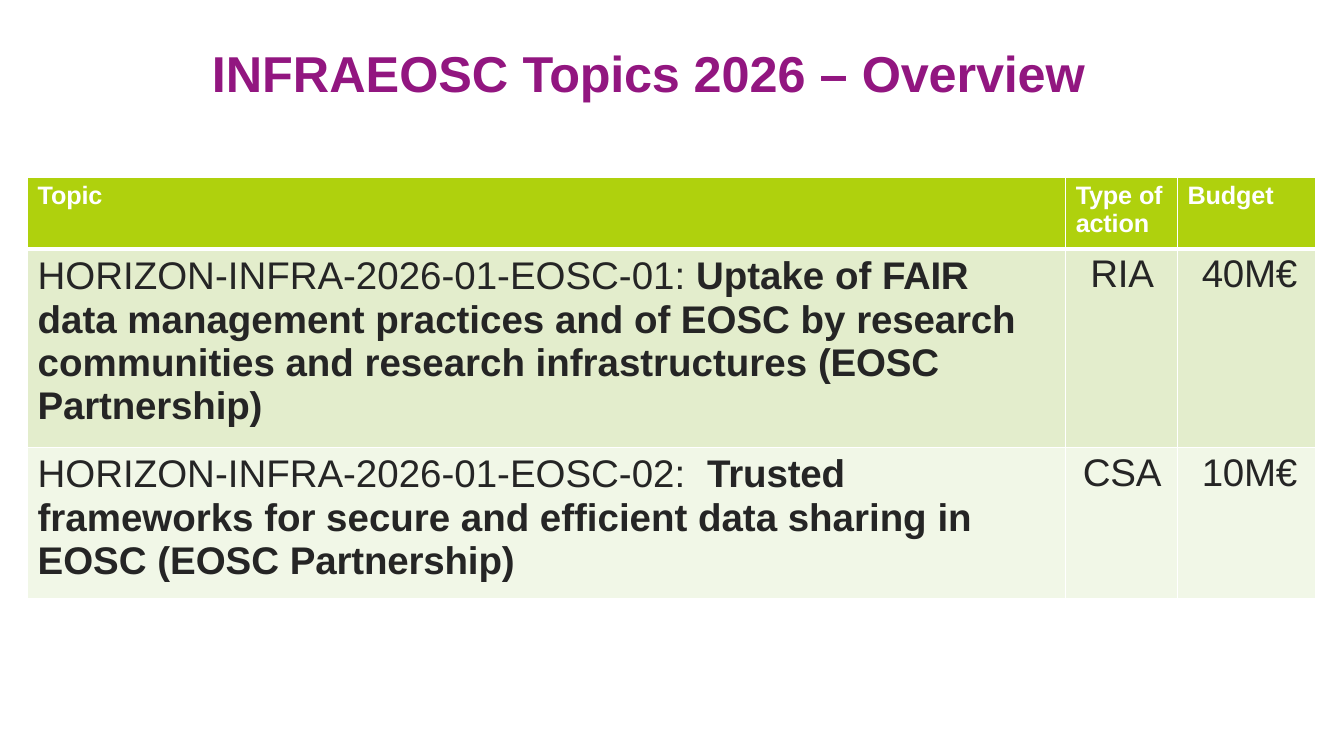
from lxml import etree
from pptx import Presentation
from pptx import util as u
from pptx.dml.color import RGBColor
from pptx.enum import text
from pptx.oxml import ns

PURPLE = RGBColor(0x92, 0x16, 0x80)
GREEN = RGBColor(0xAF, 0xD1, 0x0D)
SAGE = RGBColor(0xE3, 0xED, 0xCC)
MINT = RGBColor(0xF1, 0xF7, 0xE7)
WHITE = RGBColor(0xFF, 0xFF, 0xFF)
INK = RGBColor(0x25, 0x25, 0x25)
LEFT, CENTER, RIGHT = text.PP_ALIGN.LEFT, text.PP_ALIGN.CENTER, text.PP_ALIGN.RIGHT

COLUMNS = (26.16, 2.82, 3.48)
ROWS = (1.8, 5, 3.81)
HEADINGS = (
    [("Topic", True, -0.1)],
    [("Type ", True, -0.1), ("of ", True, -0.2), ("action", True, -0.1)],
    [("Budget", True, -0.1)],
)
TOPICS = (
    (SAGE, "RIA", "40M€", 0.4, 1.01, (
        [("HORIZON-INFRA-2026-01-EOSC-01: ", False, 0), ("Uptake of ", True, 0),
         ("FAIR", True, -0.2)],
        [("data management practices and of EOSC by ", True, 0),
         ("research ", True, -0.1),
         ("communities and research infrastructures ", True, 0),
         ("(EOSC Partnership)", True, -0.1)],
    )),
    (MINT, "CSA", "10M€", 0.8, 1, (
        [("HORIZON-INFRA-2026-01-EOSC-02:", False, 0), (" ", False, 8),
         ("Trusted", True, -0.1)],
        [("frameworks for secure and efficient data sharing ", True, 0),
         ("in ", True, -0.2), ("EOSC (EOSC ", True, 0),
         ("Partnership)", True, -0.1)],
    )),
)


class Deck:
    font = "Arial"

    def __init__(self, prs):
        self.s = prs.slides.add_slide(prs.slide_layouts[6])

    def paragraph(self, p, runs, size, color, align=LEFT, indent=0, right=0):
        p.alignment = align
        pPr = p._p.get_or_add_pPr()
        pPr.set("marL", str(u.Cm(indent)))
        pPr.set("marR", str(u.Cm(right)))
        pPr.set("indent", "0")
        for words, bold, spacing in runs:
            r = p.add_run()
            r.text = words
            r.font.name = self.font
            r.font.size = u.Pt(size)
            r.font.bold = bold
            r.font.color.rgb = color
            r._r.get_or_add_rPr().set("spc", str(round(spacing * 100)))

    def title(self, left, top, width, height, runs):
        sp = self.s.shapes.add_textbox(*map(u.Cm, (left, top, width, height)))
        tf = sp.text_frame
        tf.word_wrap = True
        tf.margin_left = tf.margin_right = tf.margin_bottom = 0
        tf.margin_top = u.Cm(0.03)
        self.paragraph(tf.paragraphs[0], runs, 36, PURPLE, indent=3.38)

    def table(self, left, top, columns, rows):
        frame = self.s.shapes.add_table(
            len(rows), len(columns), u.Cm(left), u.Cm(top),
            u.Cm(sum(columns)), u.Cm(sum(rows)))
        grid = frame.table
        grid.first_row = grid.horz_banding = False
        for column, width in zip(grid.columns, columns):
            column.width = u.Cm(width)
        for row, height in zip(grid.rows, rows):
            row.height = u.Cm(height)
        return grid

    def border(self, cell, top, bottom):
        tcPr = cell._tc.get_or_add_tcPr()
        for side, width in (("L", 1), ("R", 1), ("T", top), ("B", bottom)):
            ln = etree.SubElement(tcPr, ns.qn("a:ln" + side), w=str(u.Pt(width)))
            fill = etree.SubElement(ln, ns.qn("a:solidFill"))
            etree.SubElement(fill, ns.qn("a:srgbClr"), val=str(WHITE))

    def cell(self, cell, fill, paragraphs, size, color, align=LEFT, indent=0,
             right=0, inset=0.1, gap=0, leading=1, top=1, bottom=1):
        self.border(cell, top, bottom)
        cell.fill.solid()
        cell.fill.fore_color.rgb = fill
        cell.margin_left = cell.margin_right = cell.margin_bottom = 0
        cell.margin_top = u.Cm(inset)
        tf = cell.text_frame
        for i, runs in enumerate(paragraphs):
            p = tf.add_paragraph() if i else tf.paragraphs[0]
            self.paragraph(p, runs, size, color, align, indent, right)
            if i:
                p.space_before = u.Pt(gap)
                p.line_spacing = leading


def main():
    prs = Presentation()
    prs.slide_width, prs.slide_height = u.Cm(33.87), u.Cm(19.05)
    deck = Deck(prs)
    deck.title(1.96, 1.02, 28.6, 1.45, [
        ("INFRAEOSC ", True, 0), ("Topics ", True, -0.2),
        ("2026 – ", True, 0), ("Overview", True, -0.1)])
    grid = deck.table(0.69, 4.48, COLUMNS, ROWS)
    for col, runs in enumerate(HEADINGS):
        deck.cell(grid.cell(0, col), GREEN, [runs], 18, WHITE, indent=0.26, bottom=3)
    for row, (fill, action, budget, gap, leading, topic) in enumerate(TOPICS, 1):
        top = 3 if row == 1 else 1
        deck.cell(grid.cell(row, 0), fill, topic, 27.5, INK, indent=0.26, right=0.4,
                  inset=0.13, gap=gap, leading=leading, top=top)
        deck.cell(grid.cell(row, 1), fill, [[(action, False, -0.2)]], 27.5, INK,
                  CENTER, indent=0.04, top=top)
        deck.cell(grid.cell(row, 2), fill, [[(budget, False, -0.2)]], 27.5, INK,
                  RIGHT, right=0.46, top=top)
    prs.save("out.pptx")


if __name__ == "__main__":
    main()
